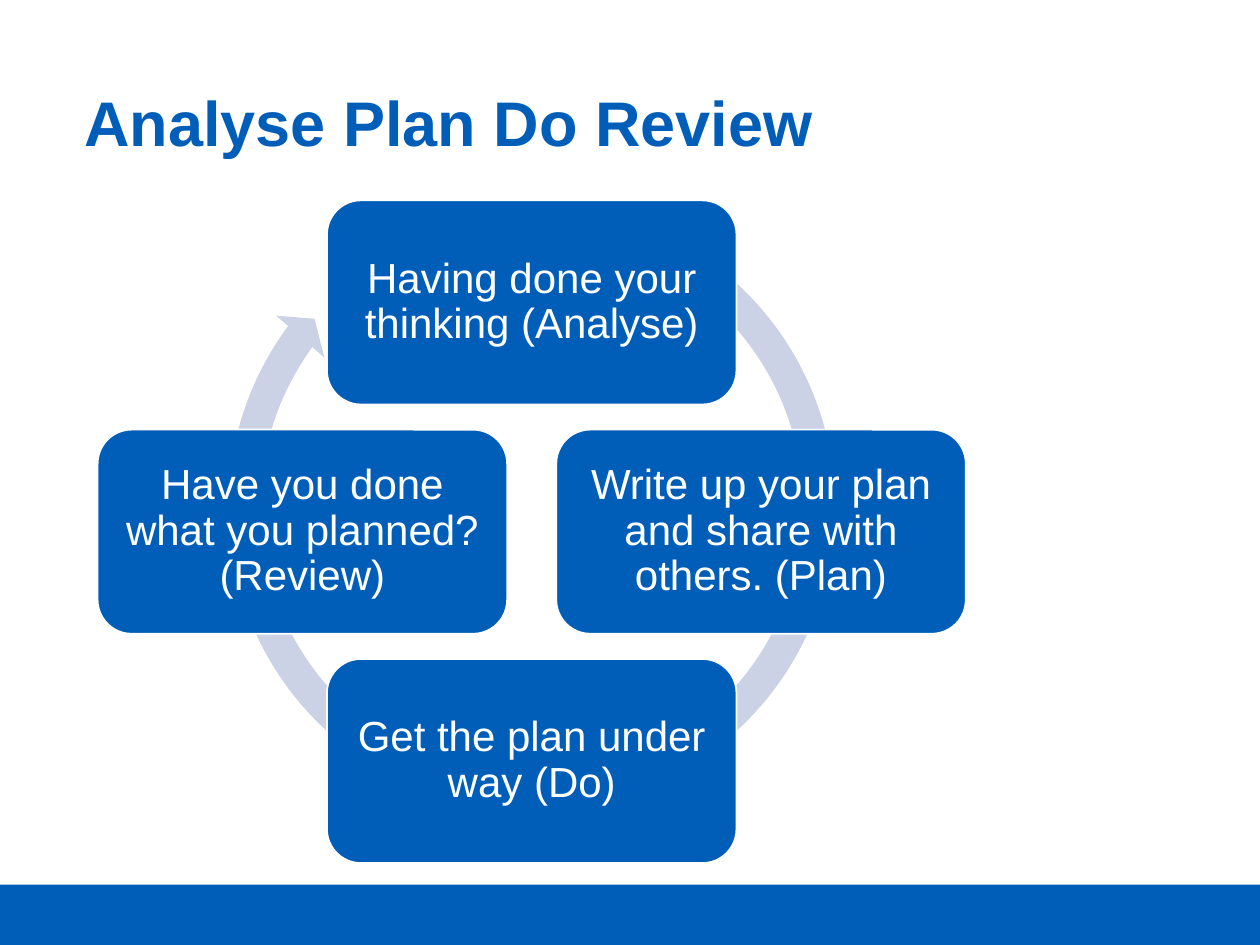
"""Build the Analyse Plan Do Review cycle slide."""
from pptx import Presentation
from pptx.dml.color import RGBColor
from pptx.enum.shapes import MSO_SHAPE
from pptx.enum.text import MSO_ANCHOR, PP_ALIGN
from pptx.util import Inches, Pt

BLUE = RGBColor(0x00, 0x5E, 0xB8)
PALE_BLUE = RGBColor(0xCC, 0xD2, 0xE6)
WHITE = RGBColor(0xFF, 0xFF, 0xFF)

CENTRE_X, CENTRE_Y = 4.22, 4.22
RADIUS = 1.82
STEP_WIDTH, STEP_HEIGHT = 3.25, 1.62
RING_SIZE = 5.07
STEPS = [
    ("Having done your thinking (Analyse)", 0, -1),
    ("Write up your plan and share with others. (Plan)", 1, 0),
    ("Get the plan under way (Do)", 0, 1),
    ("Have you done what you planned? (Review)", -1, 0),
]

prs = Presentation()
prs.slide_width, prs.slide_height = Inches(10), Inches(7.5)
slide = prs.slides.add_slide(prs.slide_layouts[5])


def add_filled(preset, left, top, width, height, color):
    shape = slide.shapes.add_shape(
        preset, Inches(left), Inches(top), Inches(width), Inches(height))
    shape.shadow.inherit = False
    shape.fill.solid()
    shape.fill.fore_color.rgb = color
    shape.line.fill.background()
    return shape


def write(frame, text, size, color, align, bold=False):
    frame.text = text
    frame.word_wrap = True
    frame.vertical_anchor = MSO_ANCHOR.MIDDLE
    paragraph = frame.paragraphs[0]
    paragraph.alignment = align
    paragraph.line_spacing = 0.9
    font = paragraph.runs[0].font
    font.name, font.size, font.bold = "Arial", Pt(size), bold
    font.color.rgb = color


add_filled(MSO_SHAPE.RECTANGLE, 0, 7.02, 10, 0.48, BLUE)

title = slide.shapes.title
title.left, title.top = Inches(0.57), Inches(0.65)
title.width, title.height = Inches(7.64), Inches(0.71)
write(title.text_frame, "Analyse Plan Do Review", 36, BLUE, PP_ALIGN.LEFT, True)

ring = add_filled(MSO_SHAPE.CIRCULAR_ARROW, CENTRE_X - RING_SIZE / 2, 1.49,
                  RING_SIZE, RING_SIZE, PALE_BLUE)
for index, value in enumerate([0.05, 2.73, 129.83, 179.29, 0.05]):
    ring.adjustments[index] = value

for wording, across, down in STEPS:
    step = add_filled(MSO_SHAPE.ROUNDED_RECTANGLE,
                      CENTRE_X + across * RADIUS - STEP_WIDTH / 2,
                      CENTRE_Y + down * RADIUS - STEP_HEIGHT / 2,
                      STEP_WIDTH, STEP_HEIGHT, BLUE)
    step.line.color.rgb = WHITE
    step.line.width = Pt(1)
    write(step.text_frame, wording, 24, WHITE, PP_ALIGN.CENTER)

prs.save("out.pptx")
